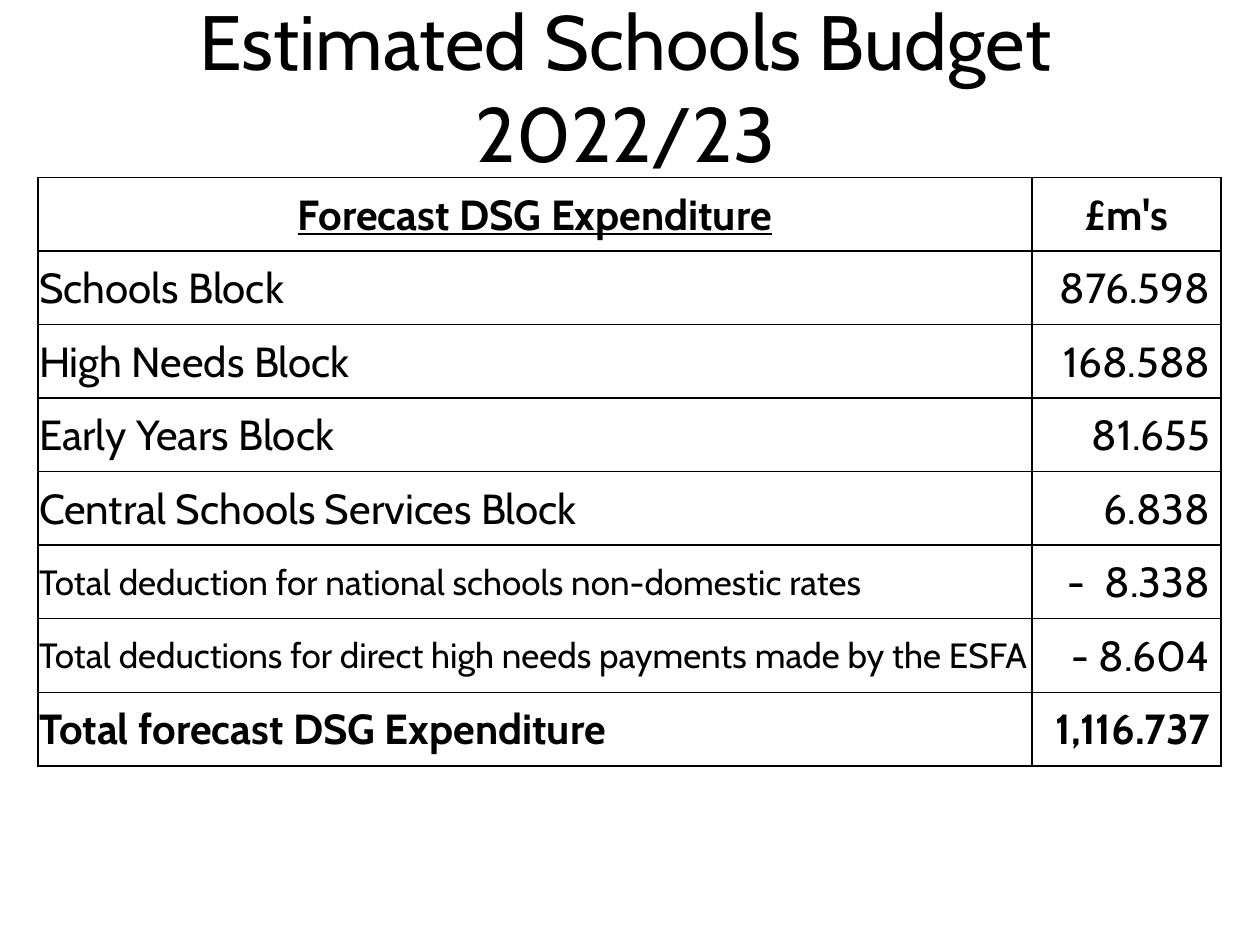
from dataclasses import dataclass

from lxml.etree import SubElement
from pptx import Presentation
from pptx.dml.color import RGBColor
from pptx.enum.text import MSO_ANCHOR as Anchor, PP_ALIGN as Align
from pptx.oxml.ns import qn
from pptx.util import Inches, Pt


@dataclass(frozen=True)
class Theme:
    """Hold the colours, font and type sizes of the slide."""
    ink: str = "000000"
    paper: str = "FFFFFF"
    font: str = "Cabin"
    title: int = 44
    body: int = 24
    small: int = 20
    rule: int = 1


THEME = Theme()

BLOCKS = [
    ("Schools Block", "876.598 ", THEME.body),
    ("High Needs Block", "168.588 ", THEME.body),
    ("Early Years Block ", "81.655 ", THEME.body),
    ("Central Schools Services Block ", "6.838 ", THEME.body),
    ("Total deduction for national schools non-domestic rates ", "-  8.338 ", THEME.small),
    ("Total deductions for direct high needs payments made by the ESFA", "- 8.604 ", THEME.small),
]


def write(frame, text, size=THEME.body, align=Align.LEFT, bold=False, underline=False):
    """Put one formatted paragraph into a text frame."""
    paragraph = frame.paragraphs[0]
    paragraph.alignment = align
    run = paragraph.add_run()
    run.text = text
    font = run.font
    font.name, font.size = THEME.font, Pt(size)
    font.bold, font.underline = bold, underline
    font.color.rgb = RGBColor.from_string(THEME.ink)


def add_title(slide, text):
    """Add the wrapped, centred heading."""
    heading = slide.shapes.add_textbox(Inches(0.27), Inches(0.13), Inches(9.39), Inches(1.1))
    frame = heading.text_frame
    frame.word_wrap = True
    frame.vertical_anchor = Anchor.MIDDLE
    write(frame, text, size=THEME.title, align=Align.CENTER)


def rule_cell(cell):
    """Draw a thin line on all four sides of a cell."""
    properties = cell._tc.get_or_add_tcPr()
    for position, side in enumerate(("a:lnL", "a:lnR", "a:lnT", "a:lnB")):
        line = SubElement(properties, qn(side), w=str(Pt(THEME.rule)))
        fill = SubElement(line, qn("a:solidFill"))
        SubElement(fill, qn("a:srgbClr"), val=THEME.ink)
        properties.insert(position, line)


def fill_cell(cell, text, **style):
    """Give a cell its text, margins, fill and borders."""
    cell.margin_left = cell.margin_right = cell.margin_top = Inches(0.01)
    cell.margin_bottom = 0
    cell.vertical_anchor = Anchor.MIDDLE
    cell.fill.solid()
    cell.fill.fore_color.rgb = RGBColor.from_string(THEME.paper)
    rule_cell(cell)
    write(cell.text_frame, text, **style)


def add_budget(slide):
    """Add the expenditure table with its header, blocks and total."""
    row_count = len(BLOCKS) + 2
    budget = slide.shapes.add_table(
        row_count, 2, Inches(0.3), Inches(1.41), Inches(9.39), Inches(4.67)).table
    budget.first_row = budget.horz_banding = False
    budget.columns[0].width, budget.columns[1].width = Inches(7.89), Inches(1.5)

    header = dict(align=Align.CENTER, bold=True)
    fill_cell(budget.cell(0, 0), "Forecast DSG Expenditure", underline=True, **header)
    fill_cell(budget.cell(0, 1), " £m's ", **header)
    for row, (block, amount, size) in enumerate(BLOCKS, start=1):
        fill_cell(budget.cell(row, 0), block, size=size, align=Align.JUSTIFY)
        fill_cell(budget.cell(row, 1), amount, align=Align.RIGHT)
    total = row_count - 1
    fill_cell(budget.cell(total, 0), "Total forecast DSG Expenditure", bold=True)
    fill_cell(budget.cell(total, 1), "1,116.737 ", align=Align.RIGHT, bold=True)


def main():
    """Build the budget slide and save it."""
    deck = Presentation()
    deck.slide_width, deck.slide_height = Inches(10), Inches(7.5)
    slide = deck.slides.add_slide(deck.slide_layouts[6])
    add_title(slide, "Estimated Schools Budget 2022/23")
    add_budget(slide)
    deck.save("out.pptx")


if __name__ == "__main__":
    main()
